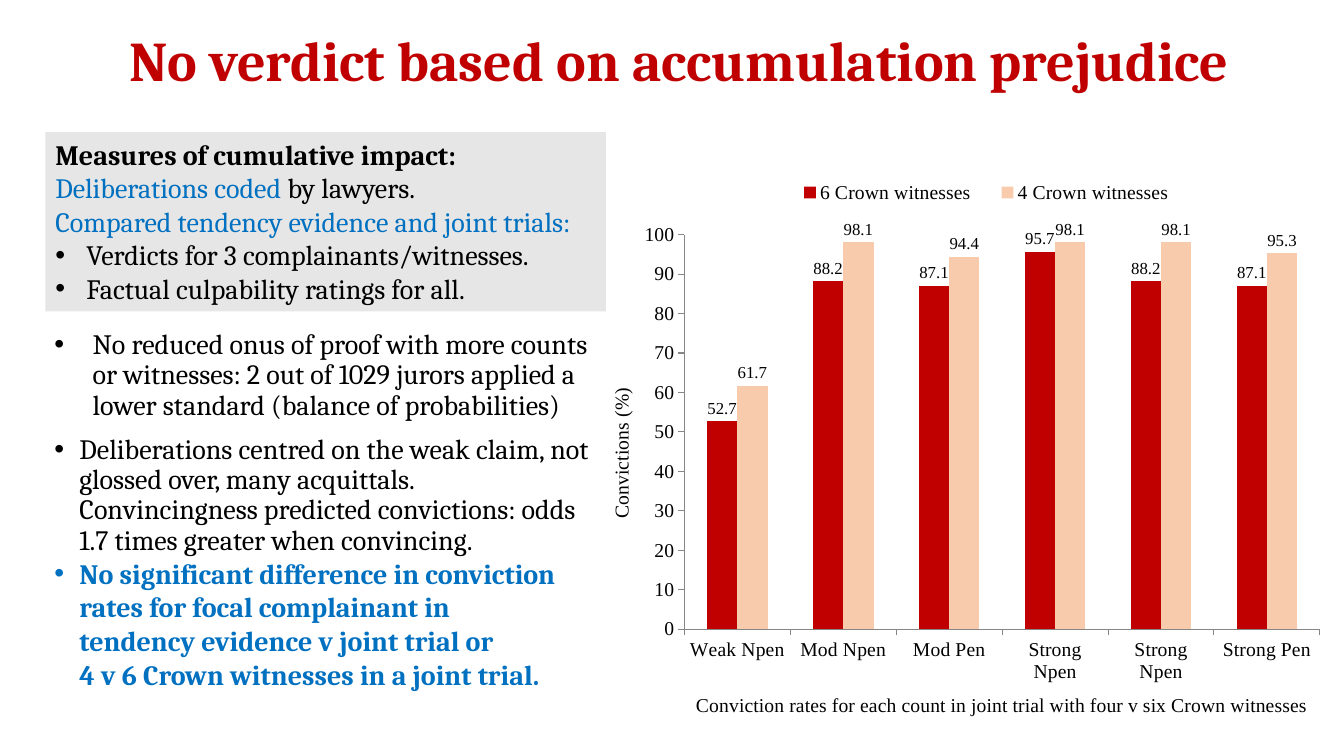
import pptx
import pptx.chart.data
import pptx.dml.color
import pptx.enum.chart
import pptx.enum.shapes
import pptx.enum.text
import pptx.oxml
import pptx.oxml.ns
import pptx.util

Inches = pptx.util.Inches
Pt = pptx.util.Pt
COLORS = {"red": "C00000", "blue": "0070C0", "peach": "F8CBAD",
          "gray": "E7E6E6", "black": "000000", "axis": "868686"}


def rgb(name):
    return pptx.dml.color.RGBColor.from_string(COLORS[name])


def write(frame, paras, size=20):
    """Fill a frame; each item is (runs, left, bullet, line spacing, space before)."""
    frame.word_wrap = True
    for i, (runs, left, bullet, line, before) in enumerate(paras):
        para = frame.paragraphs[0] if i == 0 else frame.add_paragraph()
        props = para._p.get_or_add_pPr()
        props.set("marL", str(Inches(left)))
        props.set("indent", str(-Inches(left) if bullet else 0))
        if bullet:
            for tag in ['buFont typeface="Arial"', 'buChar char="•"']:
                props.append(pptx.oxml.parse_xml(
                    f'<a:{tag} {pptx.oxml.ns.nsdecls("a")}/>'))
        para.alignment = pptx.enum.text.PP_ALIGN.LEFT
        para.line_spacing = line
        para.space_before = Pt(before)
        for text, color, bold in runs:
            run = para.add_run()
            run.text = text
            run.font.name = "Cambria"
            run.font.size = Pt(size)
            run.font.bold = bold
            run.font.color.rgb = rgb(color)


deck = pptx.Presentation()
deck.slide_width = Inches(13.33)
deck.slide_height = Inches(7.5)
slide = deck.slides.add_slide(deck.slide_layouts[6])
shapes = slide.shapes

# Title
title = shapes.add_textbox(Inches(-0.83), Inches(-0.07), Inches(15.13), Inches(1.4))
head = title.text_frame
head.vertical_anchor = pptx.enum.text.MSO_ANCHOR.MIDDLE
write(head, [([("No verdict based on accumulation prejudice", "red", True)],
              0, False, 0.9, 0)], 40)
head.paragraphs[0].alignment = pptx.enum.text.PP_ALIGN.CENTER

# Findings
body = shapes.add_textbox(Inches(0.44), Inches(3.23), Inches(5.56), Inches(4.27))
write(body.text_frame, [
    ([("No reduced onus of proof with more counts or witnesses: 2 out of 1029 "
       "jurors applied a lower standard (balance of probabilities)",
       "black", False)], 0.38, True, 0.9, 0),
    ([("Deliberations centred on the weak claim, not glossed over, many "
       "acquittals. Convincingness predicted convictions: odds 1.7 times "
       "greater when convincing.", "black", False)], 0.25, True, 0.9, 10),
    ([("No significant difference in conviction rates for focal complainant in",
       "blue", True)], 0.25, True, 1.0, 0),
    ([("tendency evidence v joint trial or", "blue", True)], 0.25, False, 1.0, 0),
    ([("4 v 6 Crown witnesses in a joint trial.", "blue", True)],
     0.25, False, 1.0, 0),
])

# Conviction chart
data = pptx.chart.data.CategoryChartData()
data.categories = ["Weak Npen", "Mod Npen", "Mod Pen",
                   "Strong Npen", "Strong Npen", "Strong Pen"]
data.add_series("6 Crown witnesses", [52.7, 88.2, 87.1, 95.7, 88.2, 87.1])
data.add_series("4 Crown witnesses", [61.7, 98.1, 94.4, 98.1, 98.1, 95.3])
chart = shapes.add_chart(
    pptx.enum.chart.XL_CHART_TYPE.COLUMN_CLUSTERED,
    Inches(6), Inches(1.63), Inches(7.88), Inches(5.59), data).chart
chart.has_title = False
chart.font.name = "Times New Roman"
chart.font.size = Pt(14)
chart.font.color.rgb = rgb("black")
chart.has_legend = True
chart.legend.position = pptx.enum.chart.XL_LEGEND_POSITION.RIGHT
chart.legend.include_in_layout = False

plot = chart.plots[0]
plot.gap_width = 150
plot.overlap = 0
plot.vary_by_categories = False
for series, color in zip(plot.series, ["red", "peach"]):
    series.format.fill.solid()
    series.format.fill.fore_color.rgb = rgb(color)
    labels = series.data_labels
    labels.show_value = True
    labels.position = pptx.enum.chart.XL_LABEL_POSITION.OUTSIDE_END
    labels.font.size = Pt(12)
    labels.font.name = "Times New Roman"
    labels.font.color.rgb = rgb("black")

cats, vals = chart.category_axis, chart.value_axis
vals.minimum_scale, vals.maximum_scale, vals.major_unit = 0, 100, 10
for axis, text in [
        (cats, "Conviction rates for each count in joint trial "
               "with four v six Crown witnesses"),
        (vals, "Convictions (%)")]:
    axis.has_major_gridlines = False
    axis.major_tick_mark = pptx.enum.chart.XL_TICK_MARK.OUTSIDE
    axis.format.line.color.rgb = rgb("axis")
    run = axis.axis_title.text_frame.paragraphs[0].add_run()
    run.text = text
    run.font.name = "Times New Roman"
    run.font.size = Pt(14)
    run.font.bold = False
    run.font.color.rgb = rgb("black")

# Chart part places, as shares of the chart: x, y and, where set, w, h
area = chart._chartSpace.chart.plotArea
for part, after, inner, place in [
        (area, None, True, (0.1, 1 / 8, 0.8, 0.7)),
        (chart.legend._element, "c:legendPos", False, (0.22, 0.02, 0.52, 0.06)),
        (cats.axis_title._element, "c:tx", False, (0.11, 0.93)),
        (vals.axis_title._element, "c:tx", False, (0, 0.39))]:
    for old in part.findall(pptx.oxml.ns.qn("c:layout")):
        part.remove(old)
    tags = '<c:layoutTarget val="inner"/>' if inner else ""
    tags += '<c:xMode val="edge"/><c:yMode val="edge"/>'
    tags += "".join(f'<c:{key} val="{share}"/>' for key, share in zip("xywh", place))
    layout = pptx.oxml.parse_xml(
        f'<c:layout {pptx.oxml.ns.nsdecls("c")}>'
        f'<c:manualLayout>{tags}</c:manualLayout></c:layout>')
    if after:
        part.find(pptx.oxml.ns.qn(after)).addnext(layout)
    else:
        part.insert(0, layout)

# Measures panel
panel = shapes.add_shape(pptx.enum.shapes.MSO_SHAPE.RECTANGLE,
                         Inches(0.45), Inches(1.31), Inches(5.56), Inches(1.78))
panel.shadow.inherit = False
panel.fill.solid()
panel.fill.fore_color.rgb = rgb("gray")
panel.line.fill.background()
panel.text_frame.vertical_anchor = pptx.enum.text.MSO_ANCHOR.TOP
write(panel.text_frame, [
    ([("Measures of cumulative impact:", "black", True)], 0, False, 1.0, 0),
    ([("Deliberations coded ", "blue", False), ("by lawyers.", "black", False)],
     0, False, 1.0, 0),
    ([("Compared tendency evidence and joint trials:", "blue", False)],
     0, False, 1.0, 0),
    ([("Verdicts for 3 complainants/witnesses.", "black", False)],
     0.31, True, 1.0, 0),
    ([("Factual culpability ratings for all.", "black", False)],
     0.31, True, 1.0, 0),
])

deck.save("out.pptx")
